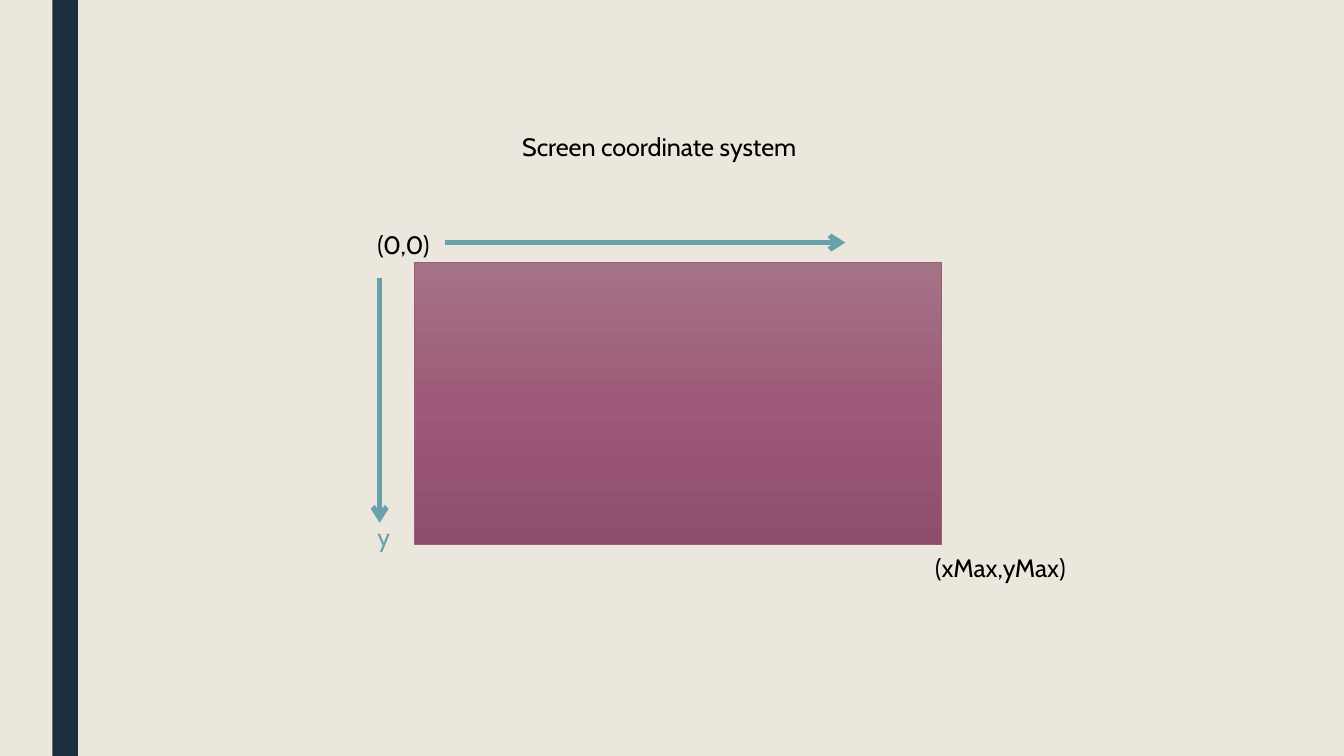
from copy import deepcopy

from lxml import etree
from pptx import Presentation
from pptx.dml.color import RGBColor
from pptx.enum.shapes import MSO_CONNECTOR, MSO_SHAPE
from pptx.enum.text import MSO_ANCHOR, MSO_AUTO_SIZE, PP_ALIGN
from pptx.oxml.ns import qn
from pptx.util import Pt

PX = 4572
WIDTH, HEIGHT = 2000, 1125
LABEL_HEIGHT = 66
FONT, FONT_SIZE = "Cabin", 13.5
RECT = MSO_SHAPE.RECTANGLE
STRAIGHT = MSO_CONNECTOR.STRAIGHT
TOP, LEFT = MSO_ANCHOR.TOP, PP_ALIGN.LEFT
NO_FIT = MSO_AUTO_SIZE.NONE
COLORS = {
    "background": "EBE7DD",
    "stripe": "1A2E40",
    "text": "000000",
    "axis": "69A1AB",
    "border": "9A5D78",
    "light": "A57388",
    "middle": "9D5A78",
    "dark": "8E4D6A",
}


def rgb(name):
    """Return the named colour."""
    return RGBColor.from_string(COLORS[name])


def px(*lengths):
    """Convert px lengths to EMU."""
    return [n * PX for n in lengths]


def write(sp, text, color="text"):
    """Put one line of left-aligned text at the top of a shape."""
    tf = sp.text_frame
    tf.text = text
    tf.word_wrap = True
    tf.auto_size = NO_FIT
    tf.vertical_anchor = TOP
    p = tf.paragraphs[0]
    p.alignment = LEFT
    font = p.runs[0].font
    font.name, font.size = FONT, Pt(FONT_SIZE)
    font.color.rgb = rgb(color)


def add_label(s, x, y, w, text, color="text"):
    """Add a one-line text box."""
    write(s.shapes.add_textbox(*px(x, y, w, LABEL_HEIGHT)), text, color)


def add_axis(s, x1, y1, x2, y2):
    """Add an axis line with an arrowhead at its end."""
    axis = s.shapes.add_connector(STRAIGHT, *px(x1, y1, x2, y2))
    axis.line.color.rgb = rgb("axis")
    axis.line.width = Pt(2.75)
    ln = axis._element.spPr.find(qn("a:ln"))
    etree.SubElement(ln, qn("a:tailEnd"), type="arrow")
    etree.SubElement(axis._element.spPr, qn("a:effectLst"))


def add_screen(s, x, y, w, h):
    """Add the screen rectangle with its vertical three-stop gradient."""
    sp = s.shapes.add_shape(RECT, *px(x, y, w, h))
    sp.shadow.inherit = False
    sp.line.color.rgb = rgb("border")
    sp.line.width = Pt(0.5)
    sp.fill.gradient()
    sp.fill.gradient_angle = 270
    stops = sp._element.spPr.find(qn("a:gradFill")).find(qn("a:gsLst"))
    stops.insert(1, deepcopy(stops[0]))
    for i, name in enumerate(("light", "middle", "dark")):
        stop = sp.fill.gradient_stops[i]
        stop.position = i / 2
        stop.color.rgb = rgb(name)


def add_backdrop(s, x, w, h):
    """Colour the background and add the vertical stripe."""
    s.background.fill.solid()
    s.background.fill.fore_color.rgb = rgb("background")
    sp = s.shapes.add_shape(RECT, *px(x, 0, w, h))
    sp.shadow.inherit = False
    sp.fill.solid()
    sp.fill.fore_color.rgb = rgb("stripe")
    sp.line.fill.background()


def add_title(s, x, y, w, text):
    """Move the title placeholder into place and fill it."""
    title = s.shapes.title
    title.left, title.top, title.width, title.height = px(x, y, w, LABEL_HEIGHT)
    write(title, text)


def add_diagram(s, x, y, w, h):
    """Draw the screen, its axes and corner labels around the given screen box."""
    add_screen(s, x, y, w, h)
    add_label(s, x + w - 29, y + h + 1, 272, "(xMax,yMax)")
    add_label(s, x - 75, y - 59, 120, "(0,0)")
    add_axis(s, x + 45, y - 30, x + 641, y - 30)
    add_axis(s, x - 52, y + 23, x - 52, y + 387)
    add_label(s, x - 75, y + 375, 68, "y", "axis")


def main():
    """Build and save the presentation."""
    prs = Presentation()
    prs.slide_width, prs.slide_height = px(WIDTH, HEIGHT)
    s = prs.slides.add_slide(prs.slide_layouts[5])
    add_backdrop(s, 78, 38, HEIGHT)
    add_diagram(s, 617, 391, 784, 420)
    add_title(s, 757, 186, 476, "Screen coordinate system")
    prs.save("out.pptx")


if __name__ == "__main__":
    main()
